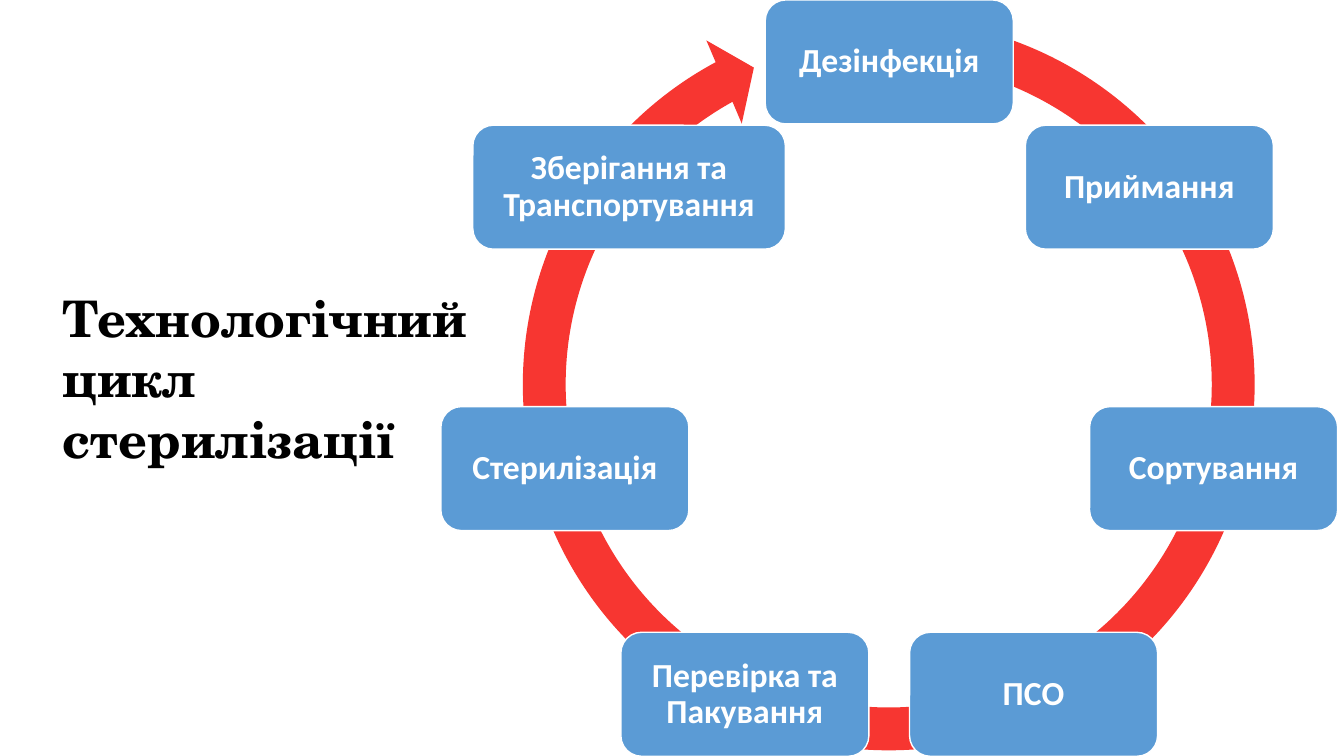
from math import cos, pi, sin

from pptx import Presentation
from pptx.dml.color import RGBColor
from pptx.enum.shapes import MSO_SHAPE as Shape
from pptx.enum.text import MSO_ANCHOR as Anchor, MSO_AUTO_SIZE as AutoSize, PP_ALIGN as Align
from pptx.util import Inches, Pt

STEPS = [
    "Дезінфекція",
    "Приймання",
    "Сортування",
    "ПСО",
    "Перевірка та Пакування",
    "Стерилізація",
    "Зберігання та Транспортування",
]
CENTER_X, CENTER_Y, RADIUS = 8.82, 3.915, 3.3
BOX_WIDTH, WIDE_BOX_WIDTH, BOX_HEIGHT = 2.46, 3.1, 1.23
ARROW_LEFT, ARROW_TOP, ARROW_SIZE = 4.95, -0.05, 7.73
# Band thickness, head angle, end angle, start angle, head width
ARROW_ADJUSTMENTS = (0.055, 3.307, 144.868, 169.668, 0.058)


def color(value):
    return RGBColor.from_string(value)


def write(frame, text, size, font, fill, align=Align.LEFT, spacing=1.0):
    frame.word_wrap = True
    frame.auto_size = AutoSize.NONE
    frame.vertical_anchor = Anchor.MIDDLE
    para = frame.paragraphs[0]
    para.alignment = align
    para.line_spacing = spacing
    span = para.add_run()
    span.text = text
    span.font.size = Pt(size)
    span.font.name = font
    span.font.bold = True
    span.font.color.rgb = color(fill)


def add_title(page, text):
    title = page.shapes.title
    title.left, title.top = Inches(0.52), Inches(2.91)
    title.width, title.height = Inches(4.58), Inches(1.67)
    write(title.text_frame, text, size=36, font="TeX Gyre Schola", fill="000000")


def add_filled_shape(page, kind, left, top, width, height, fill):
    shape = page.shapes.add_shape(
        kind, Inches(left), Inches(top), Inches(width), Inches(height))
    shape.shadow.inherit = False
    shape.fill.solid()
    shape.fill.fore_color.rgb = color(fill)
    return shape


def add_cycle_arrow(page):
    arrow = add_filled_shape(page, Shape.CIRCULAR_ARROW, ARROW_LEFT, ARROW_TOP,
                             ARROW_SIZE, ARROW_SIZE, "F73631")
    arrow.line.fill.background()
    for index, value in enumerate(ARROW_ADJUSTMENTS):
        arrow.adjustments[index] = value


def add_step(page, text, angle, width):
    """Place a step on the ring, with the angle clockwise from the top."""
    left = CENTER_X + RADIUS * sin(angle) - width / 2
    top = CENTER_Y - RADIUS * cos(angle) - BOX_HEIGHT / 2
    box = add_filled_shape(page, Shape.ROUNDED_RECTANGLE, left, top,
                           width, BOX_HEIGHT, "5B9BD5")
    box.line.color.rgb = color("FFFFFF")
    box.line.width = Pt(1)
    frame = box.text_frame
    frame.margin_left = frame.margin_right = Inches(0.1)
    frame.margin_top = frame.margin_bottom = Inches(0.1)
    write(frame, text, size=24, font="Calibri", fill="FFFFFF",
          align=Align.CENTER, spacing=0.9)


def main():
    deck = Presentation()
    deck.slide_width, deck.slide_height = Inches(13.33), Inches(7.5)
    page = deck.slides.add_slide(deck.slide_layouts[5])
    add_title(page, "Технологічний цикл стерилізації")
    add_cycle_arrow(page)
    for index, step in enumerate(STEPS):
        width = WIDE_BOX_WIDTH if step == STEPS[-1] else BOX_WIDTH
        add_step(page, step, 2 * pi * index / len(STEPS), width)
    deck.save("out.pptx")


if __name__ == "__main__":
    main()
